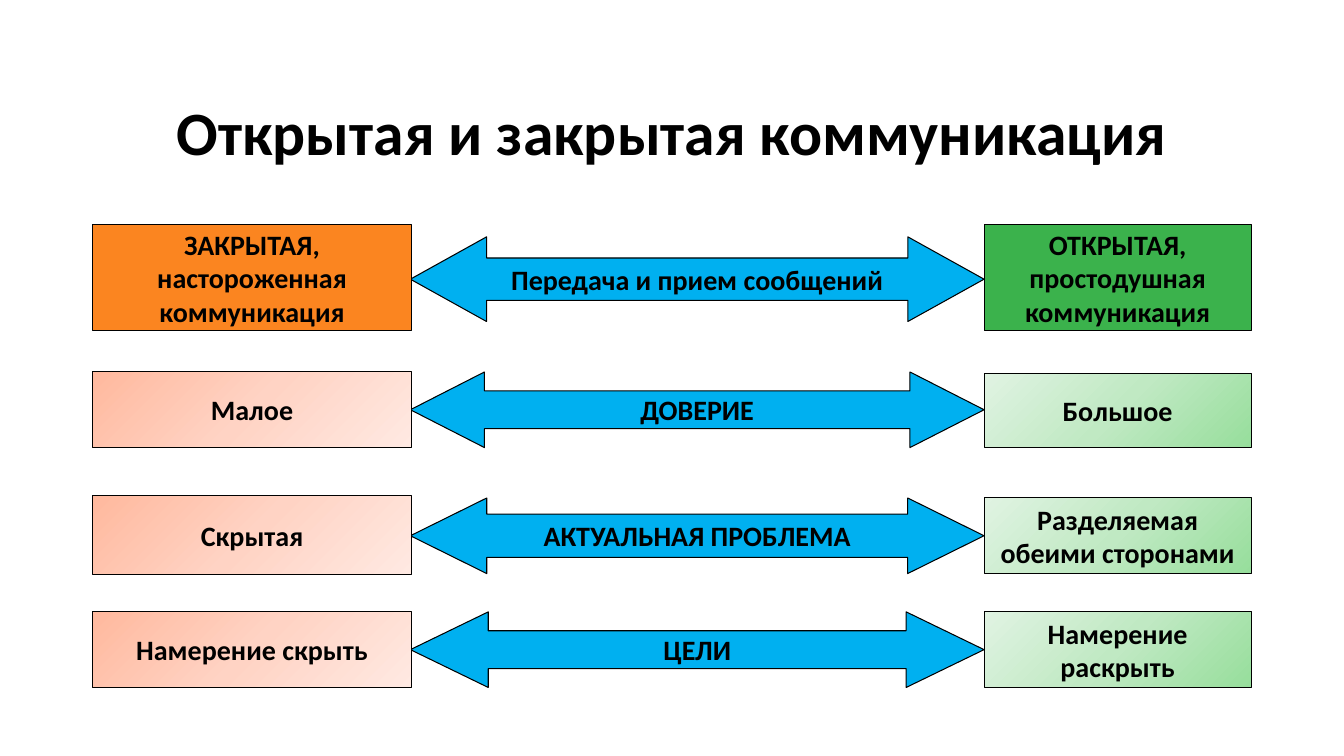
from lxml.etree import SubElement
from pptx import Presentation
from pptx.dml.color import RGBColor
from pptx.enum.shapes import MSO_SHAPE
from pptx.enum.text import MSO_ANCHOR, MSO_AUTO_SIZE, PP_ALIGN
from pptx.oxml.ns import qn
from pptx.util import Pt

PX = 9144
FONT = "Calibri"
COLORS = {
    "black": "000000",
    "arrow": "00B0F0",
    "closed": "FB8520",
    "open": "3BB24C",
}
CLOSED_STOPS = ("FFB99E", "FFD3C4", "FFE9E2")
OPEN_STOPS = ("97DE9C", "C0E9C3", "E0F3E2")
CLOSED_X, CLOSED_W = 92, 316
ARROW_X, ARROW_W = 407, 569
OPEN_X, OPEN_W = 976, 265

CLOSED = [
    ("ЗАКРЫТАЯ, настороженная коммуникация", 223, 105),
    ("Малое", 369, 75),
    ("Скрытая", 492, 78),
    ("Намерение скрыть", 607, 75),
]
ARROWS = [
    ("Передача и прием сообщений", 235, 84, 0.5, 0.9),
    ("ДОВЕРИЕ", 369, 75, 0.5, 0.98),
    ("АКТУАЛЬНАЯ ПРОБЛЕМА", 494, 75, 0.57, 1.01),
    ("ЦЕЛИ", 607, 75, 0.5, 1.03),
]
OPEN = [
    ("ОТКРЫТАЯ, простодушная коммуникация", 223, 105),
    ("Большое", 371, 73),
    ("Разделяемая обеими сторонами", 494, 75),
    ("Намерение раскрыть", 607, 75),
]


def rgb(name):
    """Return the palette colour with this name."""
    return RGBColor.from_string(COLORS[name])


def write(tf, text, size=20, spacing=None):
    """Fill a text frame with one bold centred paragraph."""
    tf.word_wrap = True
    tf.auto_size = MSO_AUTO_SIZE.NONE
    tf.vertical_anchor = MSO_ANCHOR.MIDDLE
    p = tf.paragraphs[0]
    p.alignment = PP_ALIGN.CENTER
    p.line_spacing = spacing
    r = p.add_run()
    r.text = text
    r.font.name = FONT
    r.font.size = Pt(size)
    r.font.bold = True
    r.font.color.rgb = rgb("black")


def add_block(slide, kind, x, y, w, h, text, color):
    """Add an outlined shape with a plain fill and a label."""
    sp = slide.shapes.add_shape(kind, x * PX, y * PX, w * PX, h * PX)
    sp.shadow.inherit = False
    sp.fill.solid()
    sp.fill.fore_color.rgb = rgb(color)
    sp.line.color.rgb = rgb("black")
    sp.line.width = Pt(0.75)
    write(sp.text_frame, text)
    return sp


def set_gradient(sp, stops, angle=None):
    """Give a shape a linear gradient, or a radial one from the top left."""
    solid = sp.fill._xPr.find(qn("a:solidFill"))
    grad = solid.makeelement(qn("a:gradFill"), {"rotWithShape": "1"})
    gs_list = SubElement(grad, qn("a:gsLst"))
    for i, color in enumerate(stops):
        gs = SubElement(gs_list, qn("a:gs"), pos=str(i * 50000))
        SubElement(gs, qn("a:srgbClr"), val=color)
    if angle is None:
        circle = SubElement(grad, qn("a:path"), path="circle")
        SubElement(circle, qn("a:fillToRect"), r="100000", b="100000")
    else:
        SubElement(grad, qn("a:lin"), ang=str(angle * 60000), scaled="0")
    solid.getparent().replace(solid, grad)


def add_column(slide, x, w, boxes, color, stops, angle=None):
    """Add a plain heading box and the gradient boxes below it."""
    for i, (text, y, h) in enumerate(boxes):
        sp = add_block(slide, MSO_SHAPE.RECTANGLE, x, y, w, h, text, color)
        if i:
            set_gradient(sp, stops, angle)


def add_arrow(slide, text, y, h, shaft, head):
    """Add a labelled double arrow between the two columns."""
    sp = add_block(slide, MSO_SHAPE.LEFT_RIGHT_ARROW, ARROW_X, y, ARROW_W, h,
                   text, "arrow")
    sp.adjustments[0] = shaft
    sp.adjustments[1] = head


def add_title(slide, text):
    """Place and fill the title placeholder."""
    sp = slide.shapes.title
    sp.left, sp.top, sp.width, sp.height = 92 * PX, 84 * PX, 1150 * PX, 100 * PX
    write(sp.text_frame, text, size=44, spacing=0.9)


def main():
    """Build and save the slide."""
    prs = Presentation()
    prs.slide_width, prs.slide_height = 1333 * PX, 750 * PX
    slide = prs.slides.add_slide(prs.slide_layouts[5])
    add_title(slide, "Открытая и закрытая коммуникация")
    for arrow in ARROWS:
        add_arrow(slide, *arrow)
    add_column(slide, CLOSED_X, CLOSED_W, CLOSED, "closed", CLOSED_STOPS)
    add_column(slide, OPEN_X, OPEN_W, OPEN, "open", OPEN_STOPS, angle=225)
    prs.save("out.pptx")


if __name__ == "__main__":
    main()
